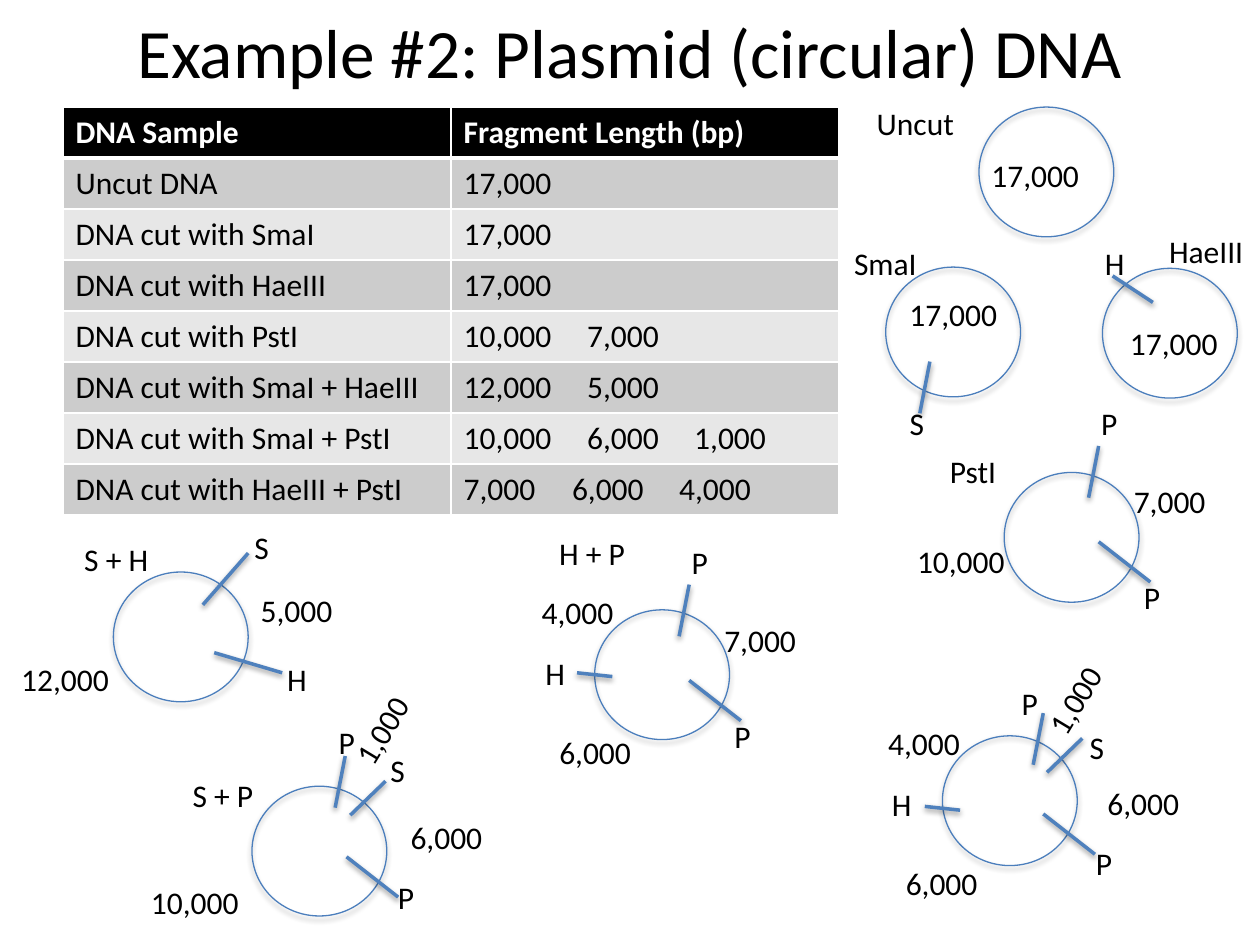
from dataclasses import dataclass
from typing import NamedTuple

from lxml.etree import SubElement
from pptx import Presentation
from pptx.dml.color import RGBColor
from pptx.enum.shapes import MSO_CONNECTOR as Conn, MSO_SHAPE as Shp
from pptx.enum.text import MSO_ANCHOR as Anchor, MSO_AUTO_SIZE as Auto, PP_ALIGN as Align
from pptx.oxml import parse_xml
from pptx.oxml.ns import nsdecls, qn
from pptx.util import Inches, Pt

BLACK = RGBColor(0x00, 0x00, 0x00)
WHITE = RGBColor(0xFF, 0xFF, 0xFF)
DARK_BAND = RGBColor(0xCC, 0xCC, 0xCC)
LIGHT_BAND = RGBColor(0xE7, 0xE7, 0xE7)
RING_BLUE = RGBColor(0x4B, 0x7E, 0xBC)
CUT_BLUE = RGBColor(0x4F, 0x81, 0xBD)

# The slide is a grid of 100 columns by 75 rows of square cells
WIDTH, HEIGHT = Inches(10), Inches(7.5)
UNIT = WIDTH // 100
RING_W, RING_H = 10.7, 10.3
LABEL_H = 4
LABEL_W = {"P": 3.3, "S": 3.2, "H": 3.6, "Uncut": 8.2, "SmaI": 7, "HaeIII": 8,
           "PstI": 5.8, "S + H": 7.2, "S + P": 6.9, "H + P": 7.3}
NUMBER_W = {5: 7.8, 6: 9}

BODY = {"name": "Calibri", "size": Pt(18), "bold": False}
HEAD = {**BODY, "bold": True}
TITLE = {**BODY, "size": Pt(39.6)}


class Label(NamedTuple):
    """Text at an offset, in grid cells, from its ring's corner."""
    text: str
    x: float
    y: float
    rotation: float = 0


class Cut(NamedTuple):
    """Cut mark: start offset from the ring's corner, and span."""
    x: float
    y: float
    span: tuple[float, float]


@dataclass
class Plasmid:
    col: float
    row: float
    labels: list[Label]
    cuts: list[Cut]


# Directions shared by the cut marks
DOWN, LOWER_P, UPPER_S, LEFT_H = (-0.8, 4.1), (-4.1, -3.2), (-2.8, 2.7), (-2.8, -0.3)
TILT = 301.1

PLASMIDS = [
    Plasmid(77.7, 8.5, [Label("Uncut", -9.1, -0.7), Label("17,000", 0, 3.4)], []),
    Plasmid(70.3, 21.2,
            [Label("SmaI", -3.5, -2.3), Label("17,000", 0.9, 1.7), Label("S", 0.9, 10.4)],
            [Cut(3.5, 7.5, DOWN)]),
    Plasmid(87.5, 21.3,
            [Label("HaeIII", 4.3, -3.4), Label("17,000", 1.2, 3.9), Label("H", -0.8, -2.4)],
            [Cut(4, 2.7, (-3.2, -2.1))]),
    Plasmid(79.7, 37.5,
            [Label("PstI", -5.3, -2.1), Label("7,000", 9.3, 0.3), Label("10,000", -7.9, 5),
             Label("P", 6.7, -5.9), Label("P", 10.1, 7.9)],
            [Cut(7.5, -2.1, DOWN), Cut(11.6, 8.7, LOWER_P)]),
    Plasmid(9, 45.4,
            [Label("S + H", -3.3, -3), Label("5,000", 10.7, 1), Label("12,000", -8.3, 6.5),
             Label("S", 10.2, -4), Label("H", 12.8, 6.5)],
            [Cut(10.7, -1.5, (-3.6, 4.1)), Cut(13.4, 8, (-5.4, -1.6))]),
    Plasmid(20, 62.4,
            [Label("S + P", -5.7, -1.3), Label("1,000", 6.4, -6.5, TILT),
             Label("6,000", 11.6, 2), Label("10,000", -9, 7.2),
             Label("P", 5.9, -5.5), Label("S", 10, -3.3), Label("P", 10.6, 6.8)],
            [Cut(7.4, -2.4, DOWN), Cut(10.6, -0.4, UPPER_S), Cut(11.6, 8.8, LOWER_P)]),
    Plasmid(47.2, 48.4,
            [Label("H + P", -3.8, -6.5), Label("7,000", 9.3, 0.4), Label("4,000", -5.2, -1.8),
             Label("6,000", -3.8, 9.3), Label("P", 6.7, -5.8), Label("P", 10.1, 8),
             Label("H", -4.9, 3)],
            [Cut(7.5, -2, DOWN), Cut(11.6, 8.8, LOWER_P), Cut(1.4, 5.3, LEFT_H)]),
    Plasmid(74.8, 58.4,
            [Label("1,000", 6.6, -4.9, TILT), Label("6,000", 12.1, 3.3),
             Label("4,000", -5.3, -1.4), Label("6,000", -3.9, 9.7), Label("P", 5.3, -4.6),
             Label("S", 10.7, -1.1), Label("P", 11.2, 8.1), Label("H", -5, 3.4)],
            [Cut(8, -1.8, DOWN), Cut(11.1, 0.2, UPPER_S), Cut(12.1, 9.4, LOWER_P),
             Cut(1.4, 5.9, LEFT_H)]),
]

SAMPLES = [
    ("DNA Sample", ["Fragment Length (bp)"]),
    ("Uncut DNA", ["17,000"]),
    ("DNA cut with SmaI", ["17,000"]),
    ("DNA cut with HaeIII", ["17,000"]),
    ("DNA cut with PstI", ["10,000", "7,000"]),
    ("DNA cut with SmaI + HaeIII", ["12,000", "5,000"]),
    ("DNA cut with SmaI + PstI", ["10,000", "6,000", "1,000"]),
    ("DNA cut with HaeIII + PstI", ["7,000", "6,000", "4,000"]),
]


def grid(*cells: float) -> list[int]:
    return [round(n * UNIT) for n in cells]


def write(p, text: str, fmt: dict, color: RGBColor = BLACK) -> None:
    r = p.add_run()
    r.text = text
    for name, value in fmt.items():
        setattr(r.font, name, value)
    r.font.color.rgb = color


def add_shadow(sp, opacity: int, distance: float) -> None:
    sp._element.spPr.append(parse_xml(
        f'<a:effectLst {nsdecls("a")}><a:outerShdw blurRad="{Pt(3.1)}" '
        f'dist="{Pt(distance)}" dir="5400000" rotWithShape="0"><a:srgbClr val="{BLACK}">'
        f'<a:alpha val="{opacity * 1000}"/></a:srgbClr></a:outerShdw></a:effectLst>'))


def add_text(s, text: str, box: list[int], fmt: dict, **frame):
    sp = s.shapes.add_textbox(*box)
    tf = sp.text_frame
    for name, value in frame.items():
        setattr(tf, name, value)
    write(tf.paragraphs[0], text, fmt)
    return sp


def add_plasmid(s, plasmid: Plasmid) -> None:
    col, row = plasmid.col, plasmid.row
    ring = s.shapes.add_shape(Shp.OVAL, *grid(col, row, RING_W, RING_H))
    ring.fill.background()
    ring.line.color.rgb, ring.line.width = RING_BLUE, Pt(0.75)
    add_shadow(ring, 35, 1.8)
    for cut in plasmid.cuts:
        x, y = col + cut.x, row + cut.y
        dx, dy = cut.span
        line = s.shapes.add_connector(Conn.STRAIGHT, *grid(x, y, x + dx, y + dy))
        line.line.color.rgb, line.line.width = CUT_BLUE, Pt(2)
        add_shadow(line, 38, 1.6)
    for label in plasmid.labels:
        width = LABEL_W.get(label.text) or NUMBER_W[len(label.text)]
        box = grid(col + label.x, row + label.y, width, LABEL_H)
        sp = add_text(s, label.text, box, BODY,
                      word_wrap=False, auto_size=Auto.SHAPE_TO_FIT_TEXT)
        sp.rotation = label.rotation


def set_borders(cell, top: float, bottom: float) -> None:
    sides = {"L": 1, "R": 1, "T": top, "B": bottom}
    for i, (side, width) in enumerate(sides.items()):
        cell._tc.get_or_add_tcPr().insert(i, parse_xml(
            f'<a:ln{side} {nsdecls("a")} w="{Pt(width)}"><a:solidFill>'
            f'<a:srgbClr val="{WHITE}"/></a:solidFill></a:ln{side}>'))


def set_tabs(p, lengths: list[str]) -> None:
    first = 9.8 if len(lengths[0]) == 6 else 8.6
    tabs = SubElement(p._p.get_or_add_pPr(), qn("a:tabLst"))
    for i in range(len(lengths) - 1):
        SubElement(tabs, qn("a:tab"), pos=str(grid(first + 8.5 * i)[0]), algn="l")


def add_samples(s) -> None:
    table = s.shapes.add_table(len(SAMPLES), 2, *grid(5, 8.5, 61.6, 32.4)).table
    for i, (sample, lengths) in enumerate(SAMPLES):
        fill = BLACK if i == 0 else DARK_BAND if i % 2 else LIGHT_BAND
        for j, text in enumerate((sample, "\t".join(lengths))):
            cell = table.cell(i, j)
            cell.fill.solid()
            cell.fill.fore_color.rgb = fill
            set_borders(cell, 3 if i == 1 else 1, 3 if i == 0 else 1)
            p = cell.text_frame.paragraphs[0]
            if "\t" in text:
                set_tabs(p, lengths)
            write(p, text, BODY if i else HEAD, BLACK if i else WHITE)


def main() -> None:
    prs = Presentation()
    prs.slide_width, prs.slide_height = WIDTH, HEIGHT
    s = prs.slides.add_slide(prs.slide_layouts[6])

    # Title
    title = add_text(s, "Example #2: Plasmid (circular) DNA", grid(5, 0.3, 90, 7.5), TITLE,
                     word_wrap=True, vertical_anchor=Anchor.MIDDLE)
    title.text_frame.paragraphs[0].alignment = Align.CENTER

    # Fragment table, then the plasmid maps around it
    add_samples(s)
    for plasmid in PLASMIDS:
        add_plasmid(s, plasmid)
    prs.save("out.pptx")


if __name__ == "__main__":
    main()
